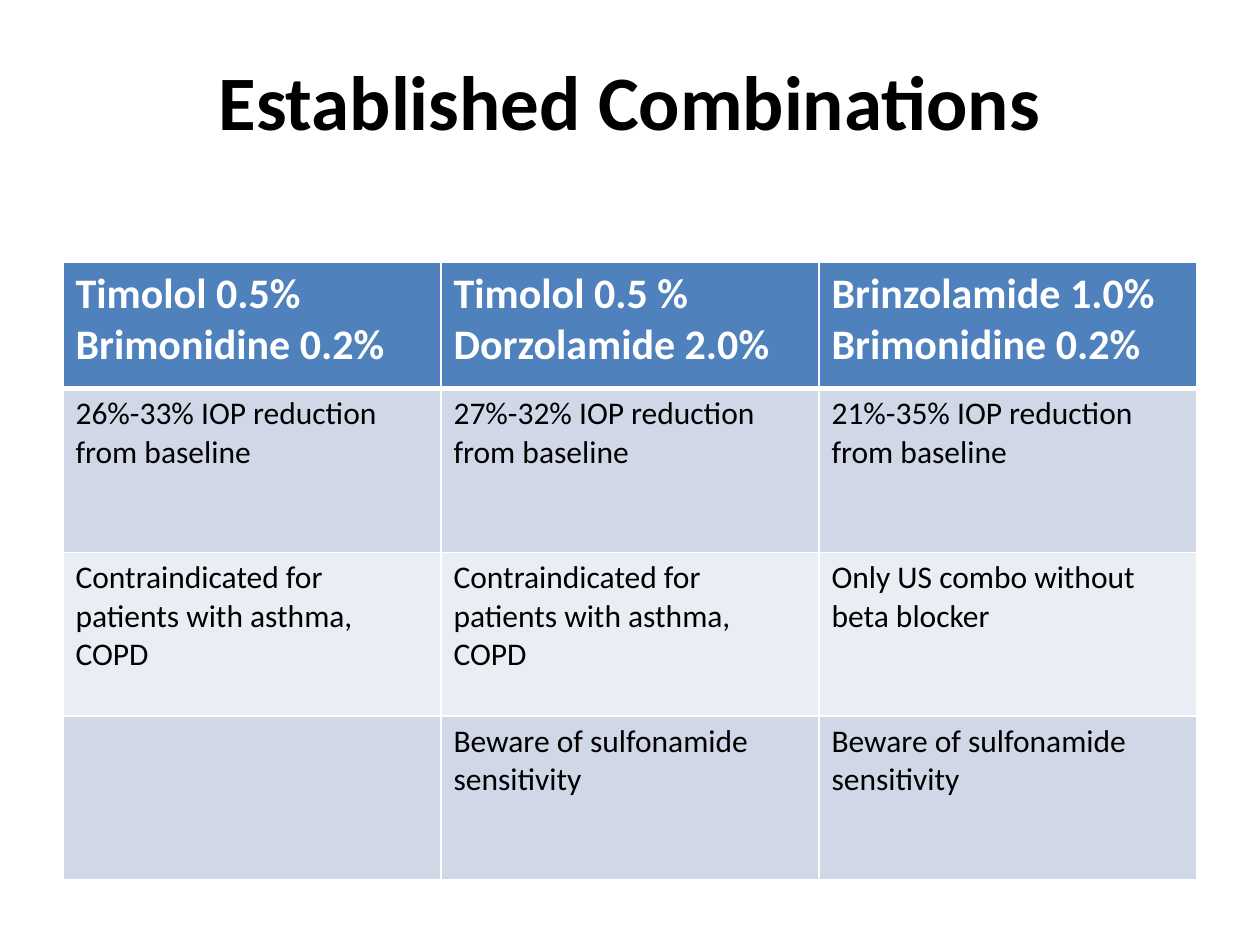
import pptx
import pptx.dml.color
import pptx.enum.text
import pptx.oxml
import pptx.oxml.ns
import pptx.util
from pptx.dml.color import RGBColor
from pptx.util import Pt

BLACK = RGBColor(0x00, 0x00, 0x00)
WHITE = RGBColor(0xFF, 0xFF, 0xFF)
HEADER_BLUE = RGBColor(0x4F, 0x81, 0xBD)
BAND_DARK = RGBColor(0xD0, 0xD8, 0xE8)
BAND_LIGHT = RGBColor(0xE9, 0xED, 0xF4)

TITLE_FORMAT = {"name": "Calibri", "size": Pt(44), "bold": True}
HEADER_FORMAT = {"name": "Calibri", "size": Pt(24), "bold": True}
BODY_FORMAT = {"name": "Calibri", "size": Pt(18), "bold": False}

COMBINATIONS = [
    ["Timolol 0.5%\nBrimonidine 0.2%", "Timolol 0.5 %\nDorzolamide 2.0%",
     "Brinzolamide 1.0%\nBrimonidine 0.2%"],
    [f"{reduction} IOP reduction from baseline"
     for reduction in ("26%-33%", "27%-32%", "21%-35%")],
    ["Contraindicated for patients with asthma, COPD"] * 2
    + ["Only US combo without beta blocker"],
    [""] + ["Beware of sulfonamide sensitivity"] * 2,
]


class SlideBuilder:
    def __init__(self, presentation):
        self.slide = presentation.slides.add_slide(presentation.slide_layouts[5])

    def fill_text(self, text_frame, text, font_format, color):
        text_frame.text = text
        for paragraph in text_frame.paragraphs:
            for name, value in font_format.items():
                setattr(paragraph.font, name, value)
            paragraph.font.color.rgb = color

    def title(self, text, left, top, width, height):
        shape = self.slide.shapes.title
        box = {"left": left, "top": top, "width": width, "height": height}
        for name, value in box.items():
            setattr(shape, name, Pt(value))
        self.fill_text(shape.text_frame, text, TITLE_FORMAT, BLACK)
        shape.text_frame.vertical_anchor = pptx.enum.text.MSO_ANCHOR.MIDDLE
        shape.text_frame.paragraphs[0].alignment = pptx.enum.text.PP_ALIGN.CENTER

    def borders(self, cell, widths):
        properties = cell._tc.get_or_add_tcPr()
        for index, (side, width) in enumerate(widths.items()):
            line = pptx.oxml.parse_xml(
                f'<a:ln{side} {pptx.oxml.ns.nsdecls("a")} w="{Pt(width)}">'
                f'<a:solidFill><a:srgbClr val="{WHITE}"/></a:solidFill></a:ln{side}>'
            )
            properties.insert(index, line)

    def table(self, rows, left, top, width, row_heights):
        shape = self.slide.shapes.add_table(
            len(rows), len(rows[0]), Pt(left), Pt(top), Pt(width), Pt(sum(row_heights))
        )
        for row_index, texts in enumerate(rows):
            shape.table.rows[row_index].height = Pt(row_heights[row_index])
            header = row_index == 0
            band = BAND_DARK if row_index % 2 else BAND_LIGHT
            for column_index, text in enumerate(texts):
                cell = shape.table.cell(row_index, column_index)
                cell.fill.solid()
                cell.fill.fore_color.rgb = HEADER_BLUE if header else band
                self.borders(cell, {"L": 1, "R": 1, "T": 3 if row_index == 1 else 1,
                                    "B": 3 if header else 1})
                self.fill_text(cell.text_frame, text,
                               HEADER_FORMAT if header else BODY_FORMAT,
                               WHITE if header else BLACK)


def main():
    presentation = pptx.Presentation()
    presentation.slide_width = Pt(720)
    presentation.slide_height = Pt(540)
    builder = SlideBuilder(presentation)
    builder.title("Established Combinations", 36, 12, 648, 90)
    builder.table(COMBINATIONS, 36, 150, 648, [72] + [93.6] * 3)
    presentation.save("out.pptx")


if __name__ == "__main__":
    main()
